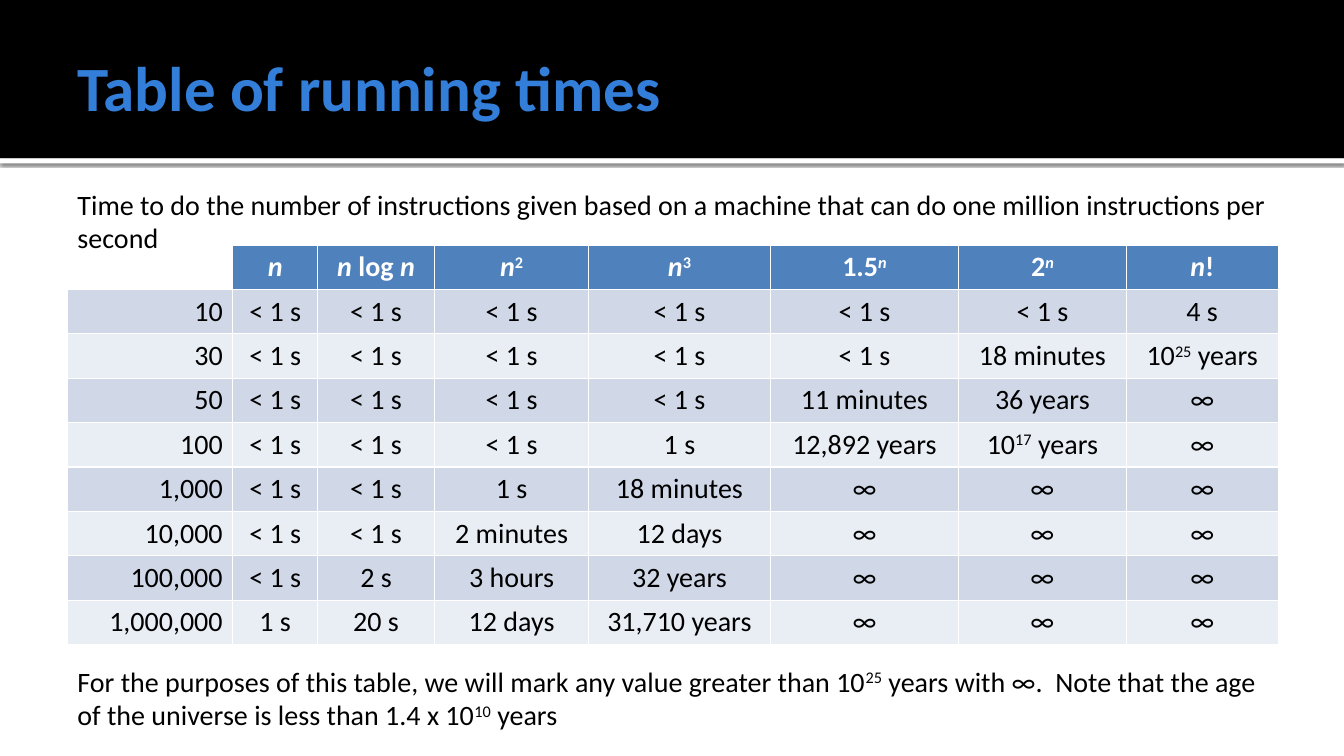
from lxml import etree
from pptx import Presentation
from pptx.dml.color import RGBColor
from pptx.enum.shapes import MSO_SHAPE
from pptx.enum.text import MSO_ANCHOR, MSO_AUTO_SIZE, PP_ALIGN
from pptx.oxml.ns import qn
from pptx.util import Inches, Pt

RECT = MSO_SHAPE.RECTANGLE
MIDDLE, TOP = MSO_ANCHOR.MIDDLE, MSO_ANCHOR.TOP
FIT, NO_FIT = MSO_AUTO_SIZE.SHAPE_TO_FIT_TEXT, MSO_AUTO_SIZE.NONE
LEFT, CENTER, RIGHT = PP_ALIGN.LEFT, PP_ALIGN.CENTER, PP_ALIGN.RIGHT

TITLE = {"name": "Calibri", "size": Pt(45), "bold": True, "color": "337ED9"}
BODY = {"name": "Calibri", "size": Pt(20), "bold": False, "color": "000000"}
HEADER = {**BODY, "bold": True, "color": "FFFFFF"}
HEADER_FILL = "4F81BD"
BANDS = ("D0D8E8", "E9EDF4")

COL_WIDTHS = (1.64, 0.84, 1.16, 1.53, 1.8, 1.87, 1.66, 1.51)
ROW_HEIGHT = 0.42
RUNNING_TIMES = [
    ["", "_n", "_n| log |_n", "_n|^2", "_n|^3", "1.5|^_n", "2|^_n", "_n|!"],
    ["10"] + ["< 1 s"] * 6 + ["4 s"],
    ["30"] + ["< 1 s"] * 5 + ["18 minutes", "10|^25| years"],
    ["50"] + ["< 1 s"] * 4 + ["11 minutes", "36 years", "∞"],
    ["100"] + ["< 1 s"] * 3 + ["1 s", "12,892 years", "10|^17| years", "∞"],
    ["1,000", "< 1 s", "< 1 s", "1 s", "18 minutes"] + ["∞"] * 3,
    ["10,000", "< 1 s", "< 1 s", "2 minutes", "12 days"] + ["∞"] * 3,
    ["100,000", "< 1 s", "2 s", "3 hours", "32 years"] + ["∞"] * 3,
    ["1,000,000", "1 s", "20 s", "12 days", "31,710 years"] + ["∞"] * 3,
]


def rgb(value):
    """Turn a hex string into a colour."""
    return RGBColor.from_string(value)


class SlideBuilder:
    """Draw styled elements on one slide."""

    def __init__(self, slide):
        """Keep the slide to draw on."""
        self.slide = slide

    def add_runs(self, p, text, style, align=LEFT):
        """Add runs split at bars; a leading ^ raises a run and _ slants it."""
        p.alignment = align
        for part in text.split("|"):
            plain = part.lstrip("^_")
            marks = part[:len(part) - len(plain)]
            r = p.add_run()
            r.text = plain
            for key, value in style.items():
                if key == "color":
                    r.font.color.rgb = rgb(value)
                else:
                    setattr(r.font, key, value)
            r.font.italic = "_" in marks
            if "^" in marks:
                r._r.get_or_add_rPr().set("baseline", "30000")

    def bar(self, top, height, color, shadow=False):
        """Add a full-width bar, with a soft shadow below it if asked."""
        sp = self.slide.shapes.add_shape(RECT, 0, Inches(top), Inches(13.33), Inches(height))
        sp.shadow.inherit = False
        sp.fill.solid()
        sp.fill.fore_color.rgb = rgb(color)
        sp.line.fill.background()
        if shadow:
            effects = sp._element.spPr.find(qn("a:effectLst"))
            outer = etree.SubElement(effects, qn("a:outerShdw"), blurRad=str(Pt(2.5)),
                                     dist=str(Pt(0.8)), dir="5400000", algn="tl", rotWithShape="0")
            tint = etree.SubElement(outer, qn("a:srgbClr"), val="000000")
            etree.SubElement(tint, qn("a:alpha"), val="60000")

    def text(self, top, height, text, style, anchor=TOP, fit=FIT, right=0.1):
        """Add a wrapped text box in the content column."""
        s = self.slide.shapes.add_textbox(Inches(0.67), Inches(top), Inches(12), Inches(height))
        tf = s.text_frame
        settings = {"word_wrap": True, "auto_size": fit, "vertical_anchor": anchor,
                    "margin_right": Inches(right)}
        for key, value in settings.items():
            setattr(tf, key, value)
        self.add_runs(tf.paragraphs[0], text, style)

    def table(self, top, rows):
        """Add the banded table with a header row and right-aligned sizes."""
        tbl = self.slide.shapes.add_table(
            len(rows), len(COL_WIDTHS), Inches(0.67), Inches(top),
            Inches(sum(COL_WIDTHS)), Inches(ROW_HEIGHT * len(rows))).table
        for column, width in zip(tbl.columns, COL_WIDTHS):
            column.width = Inches(width)
        for i, row in enumerate(rows):
            fill, style = (BANDS[(i - 1) % 2], BODY) if i else (HEADER_FILL, HEADER)
            for j, text in enumerate(row):
                cell = tbl.cell(i, j)
                if not text:
                    cell.fill.background()
                    continue
                cell.fill.solid()
                cell.fill.fore_color.rgb = rgb(fill)
                self.add_runs(cell.text_frame.paragraphs[0], text, style, CENTER if j else RIGHT)


def main():
    """Build and save the slide."""
    prs = Presentation()
    prs.slide_width, prs.slide_height = Inches(13.33), Inches(7.5)
    s = SlideBuilder(prs.slides.add_slide(prs.slide_layouts[6]))
    s.bar(1.57, 0.05, "FFFFFF", shadow=True)
    s.bar(0, 1.57, "000000")
    s.text(0.17, 1.37, "Table of running times", TITLE, MIDDLE, NO_FIT, 0.05)
    s.table(2.43, RUNNING_TIMES)
    s.text(6.54, 0.77, "For the purposes of this table, we will mark any value greater than "
           "10|^25| years with ∞.  Note that the age of the universe is less than "
           "1.4 x 10|^10| years", BODY)
    s.text(1.81, 0.77, "Time to do the number of instructions given based on a machine "
           "that can do one million instructions per second", BODY)
    prs.save("out.pptx")


if __name__ == "__main__":
    main()
